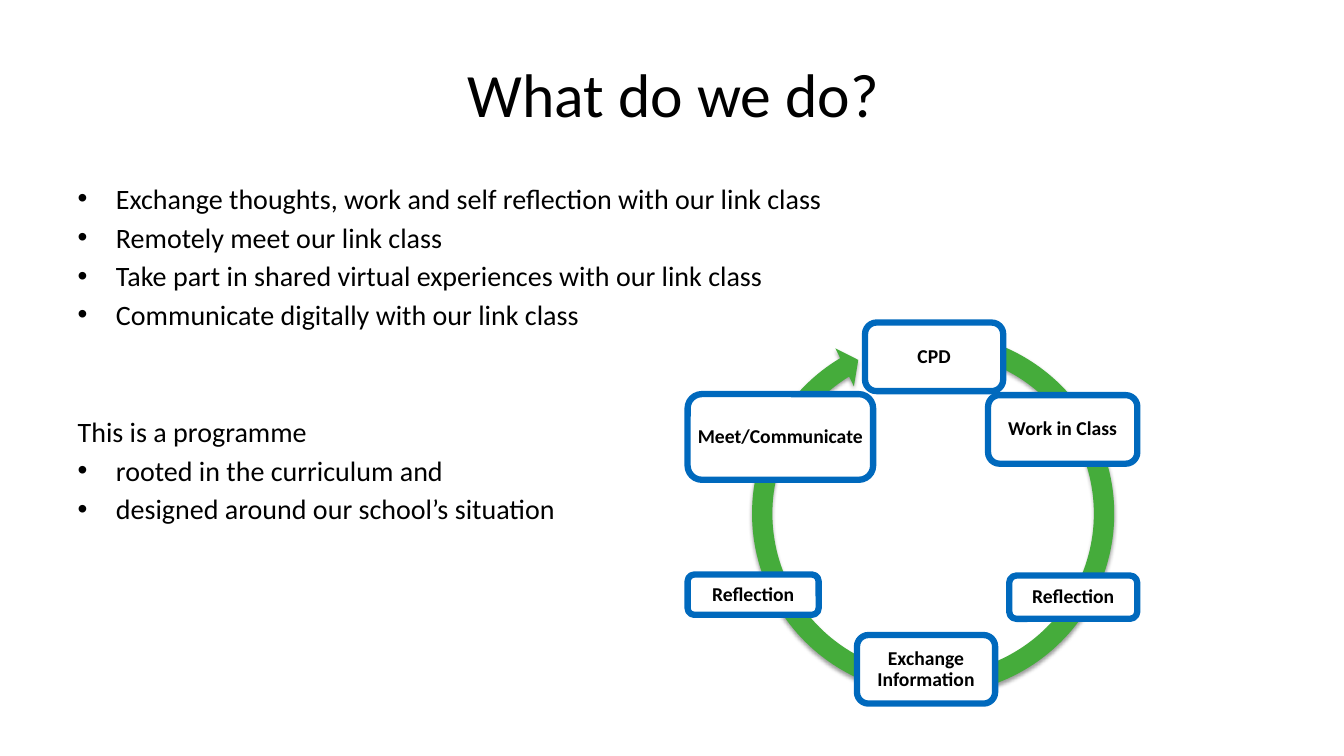
from lxml import etree
from pptx import Presentation, util as u
from pptx.dml.color import RGBColor
from pptx.enum import shapes, text
from pptx.oxml.ns import qn

HUES = {"ink": "000000", "paper": "FFFFFF", "ring": "45AC3B", "edge": "0069BD"}
WIDE, HIGH = u.Inches(13.33), u.Inches(7.5)
COLS, ROWS = 133.3, 75

ITEMS = [
    ("Exchange thoughts, work and self reflection with our link class", True),
    ("Remotely meet our link class", True),
    ("Take part in shared virtual experiences with our link class", True),
    ("Communicate digitally with our link class", True),
    ("This is a programme", False),
    ("rooted in the curriculum and", True),
    ("designed around our school’s situation", True),
]
STEPS = [
    ("CPD", 85.8, 32, 13.7, 6.8),
    ("Work in Class", 98, 39.2, 14.8, 6.8),
    ("Reflection", 100.1, 57.1, 12.7, 4.3),
    ("Exchange Information", 85, 63, 13.7, 6.8),
    ("Reflection", 68.2, 57, 13, 4),
    ("Meet/Communicate", 68.2, 39.1, 18.4, 8.5),
]


def hue(name):
    """Give the colour with this name."""
    return RGBColor.from_string(HUES[name])


def cell(col, row, wide, high):
    """Turn grid columns and rows into a place on the slide."""
    return (int(WIDE * col / COLS), int(HIGH * row / ROWS),
            int(WIDE * wide / COLS), int(HIGH * high / ROWS))


def place(shape, *grid):
    """Move a placeholder to its grid cell."""
    shape.left, shape.top, shape.width, shape.height = cell(*grid)
    shape.text_frame.auto_size = text.MSO_AUTO_SIZE.NONE
    return shape.text_frame


def mark(para, bullet):
    """Give a paragraph a hanging bullet or none."""
    props = para._p.get_or_add_pPr()
    hang = u.Inches(0.38) if bullet else 0
    props.set("marL", str(hang))
    props.set("indent", str(-hang))
    if bullet:
        etree.SubElement(props, qn("a:buChar"), char="•")
    else:
        etree.SubElement(props, qn("a:buNone"))


def write(para, words, size=20, bold=False, align=None, before=0, line=1.0):
    """Fill a paragraph with formatted words."""
    para.alignment = align
    para.space_before = u.Pt(before)
    para.line_spacing = line
    run = para.add_run()
    run.text = words
    font = run.font
    font.name, font.size, font.bold = "Calibri", u.Pt(size), bold
    font.color.rgb = hue("ink")


def listing(frame):
    """Write the list, with a wide gap above its plain line."""
    for i, (words, bullet) in enumerate(ITEMS):
        para = frame.paragraphs[0] if i == 0 else frame.add_paragraph()
        mark(para, bullet)
        gap = 0 if i == 0 else 3.6 if bullet else 59.7
        write(para, words, align=text.PP_ALIGN.LEFT, before=gap)


def ring(slide):
    """Draw the round arrow with its soft shadow."""
    kind = shapes.MSO_SHAPE.CIRCULAR_ARROW
    arrow = slide.shapes.add_shape(kind, *cell(73.5, 31.9, 38.1, 38.1))
    for i, value in enumerate((0.053, 3.126, 143.296, 170.679, 0.055)):
        arrow.adjustments[i] = value
    arrow.fill.solid()
    arrow.fill.fore_color.rgb = hue("ring")
    arrow.line.fill.background()
    arrow.shadow.inherit = False
    glow = arrow._element.spPr.find(qn("a:effectLst"))
    cast = etree.SubElement(glow, qn("a:outerShdw"), blurRad=str(u.Pt(3.1)),
                            dist=str(u.Pt(1.6)), dir="5400000", rotWithShape="0")
    tint = etree.SubElement(cast, qn("a:srgbClr"), val=HUES["ink"])
    etree.SubElement(tint, qn("a:alpha"), val="38000")


def step(slide, words, *grid):
    """Draw one labelled step of the cycle."""
    box = slide.shapes.add_shape(shapes.MSO_SHAPE.ROUNDED_RECTANGLE, *cell(*grid))
    box.shadow.inherit = False
    box.fill.solid()
    box.fill.fore_color.rgb = hue("paper")
    box.line.color.rgb = hue("edge")
    box.line.width = u.Pt(4.5)
    frame = box.text_frame
    frame.word_wrap = True
    frame.vertical_anchor = text.MSO_ANCHOR.MIDDLE
    frame.margin_left = frame.margin_right = u.Inches(0.04)
    frame.margin_top = frame.margin_bottom = u.Inches(0.04)
    write(frame.paragraphs[0], words, size=14, bold=True,
          align=text.PP_ALIGN.CENTER, line=0.9)


def main():
    """Build and save the slide."""
    deck = Presentation()
    deck.slide_width, deck.slide_height = WIDE, HIGH
    slide = deck.slides.add_slide(deck.slide_layouts[1])
    title, body = slide.placeholders
    head = place(title, 6.8, 3, 120, 12.5)
    head.vertical_anchor = text.MSO_ANCHOR.MIDDLE
    write(head.paragraphs[0], "What do we do?", size=44, align=text.PP_ALIGN.CENTER)
    listing(place(body, 6.7, 17.5, 120, 49.5))
    ring(slide)
    for item in STEPS:
        step(slide, *item)
    deck.save("out.pptx")


if __name__ == "__main__":
    main()
